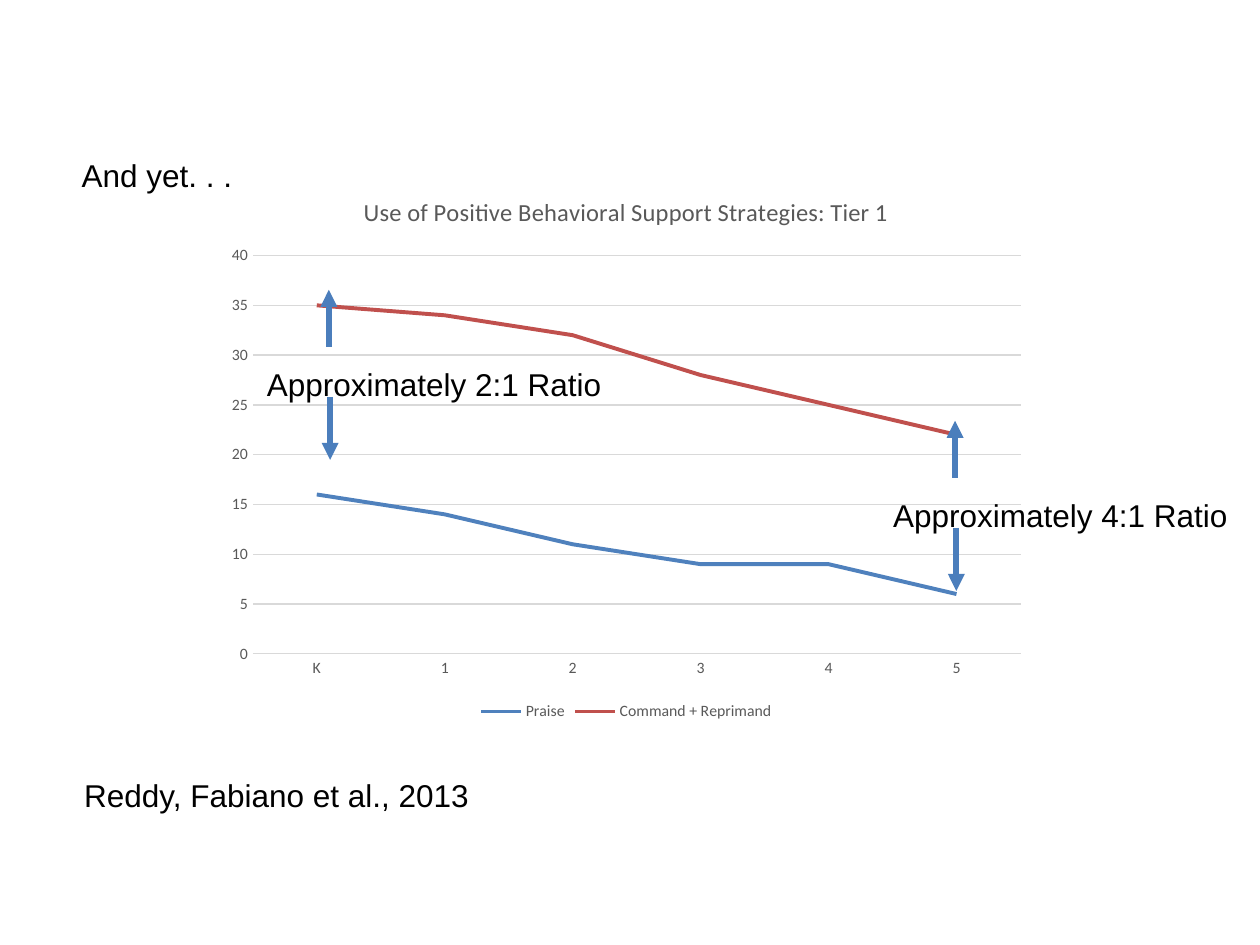
"""Build a slide charting praise against commands and reprimands by grade."""
from lxml.etree import SubElement
from pptx import Presentation
from pptx.chart.data import CategoryChartData
from pptx.dml.color import RGBColor
from pptx.enum.chart import XL_CHART_TYPE, XL_LEGEND_POSITION as Legend, XL_TICK_MARK as Tick
from pptx.enum.shapes import MSO_CONNECTOR
from pptx.enum.text import MSO_AUTO_SIZE
from pptx.oxml.ns import qn
from pptx.util import Inches, Pt

BLACK = RGBColor(0x00, 0x00, 0x00)
GREY = RGBColor(0x59, 0x59, 0x59)
GRID = RGBColor(0xD9, 0xD9, 0xD9)
BLUE = RGBColor(0x4F, 0x81, 0xBD)
RED = RGBColor(0xC0, 0x50, 0x4D)
ARROW = RGBColor(0x4B, 0x7E, 0xBC)

CHART_TITLE = "Use of Positive Behavioral Support Strategies: Tier 1"
CHART_AREA = (1.71, 1.37, 6.52, 4.39)
GRADES = ["K", "1", "2", "3", "4", "5"]
STRATEGIES = [
    ("Praise", [16, 14, 11, 9, 9, 6], BLUE),
    ("Command + Reprimand", [35, 34, 32, 28, 25, 22], RED),
]
CAPTIONS = [
    ("Reddy, Fabiano et al., 2013", 0.57, 6.11, 3.28),
    ("And yet. . .", 0.55, 1.19, 1.48),
]
RATIOS = [
    ("Approximately 2:1 Ratio", 2.02, 2.85),
    ("Approximately 4:1 Ratio", 6.99, 3.89),
]
RATIO_WIDTH = 2.88
CAPTION_HEIGHT = 0.4
ARROW_OFFSETS = [(0.59, -0.1, -0.55), (0.6, 0.3, 0.8)]


def style_font(font, size, color, name="Calibri"):
    font.size, font.name, font.bold = Pt(size), name, False
    font.color.rgb = color


def add_caption(slide, wording, left, top, width):
    caption = slide.shapes.add_textbox(*map(Inches, (left, top, width, CAPTION_HEIGHT)))
    frame = caption.text_frame
    frame.word_wrap = False
    frame.auto_size = MSO_AUTO_SIZE.SHAPE_TO_FIT_TEXT
    frame.text = wording
    style_font(frame.paragraphs[0].font, 18, BLACK, "Arial")


def add_arrow(slide, x, start, end):
    arrow = slide.shapes.add_connector(
        MSO_CONNECTOR.STRAIGHT, *map(Inches, (x, start, x, end)))
    arrow.line.color.rgb = ARROW
    arrow.line.width = Pt(3.25)
    SubElement(arrow.line._get_or_add_ln(), qn("a:tailEnd"), type="triangle")
    SubElement(arrow._element.spPr, qn("a:effectLst"))


def add_strategy_chart(slide):
    usage = CategoryChartData()
    usage.categories = GRADES
    for name, values, _ in STRATEGIES:
        usage.add_series(name, values)
    chart = slide.shapes.add_chart(
        XL_CHART_TYPE.LINE, *map(Inches, CHART_AREA), usage).chart
    style_font(chart.font, 10, BLACK)

    chart.has_title = True
    heading = chart.chart_title.text_frame
    heading.text = CHART_TITLE
    style_font(heading.paragraphs[0].font, 14, GREY)
    chart.chart_title.include_in_layout = False

    chart.has_legend = True
    chart.legend.position = Legend.BOTTOM
    chart.legend.include_in_layout = False
    style_font(chart.legend.font, 9, GREY)

    grades, counts = chart.category_axis, chart.value_axis
    for axis in (grades, counts):
        axis.major_tick_mark = axis.minor_tick_mark = Tick.NONE
        style_font(axis.tick_labels.font, 9, GREY)
    counts.minimum_scale, counts.maximum_scale, counts.major_unit = 0, 40, 5
    counts.format.line.fill.background()
    for rule in (grades.format.line, counts.major_gridlines.format.line):
        rule.color.rgb = GRID
        rule.width = Pt(0.75)

    plot = chart.plots[0]
    plot.vary_by_categories = False
    for series, (_, _, color) in zip(plot.series, STRATEGIES):
        series.smooth = False
        series.format.line.color.rgb = color
        series.format.line.width = Pt(2.25)


def main():
    deck = Presentation()
    deck.slide_width, deck.slide_height = Inches(10), Inches(7.5)
    slide = deck.slides.add_slide(deck.slide_layouts[6])
    add_strategy_chart(slide)
    for caption in CAPTIONS:
        add_caption(slide, *caption)
    for wording, left, top in RATIOS:
        add_caption(slide, wording, left, top, RATIO_WIDTH)
        for shift, start, end in ARROW_OFFSETS:
            add_arrow(slide, left + shift, top + start, top + end)
    deck.save("out.pptx")


if __name__ == "__main__":
    main()
